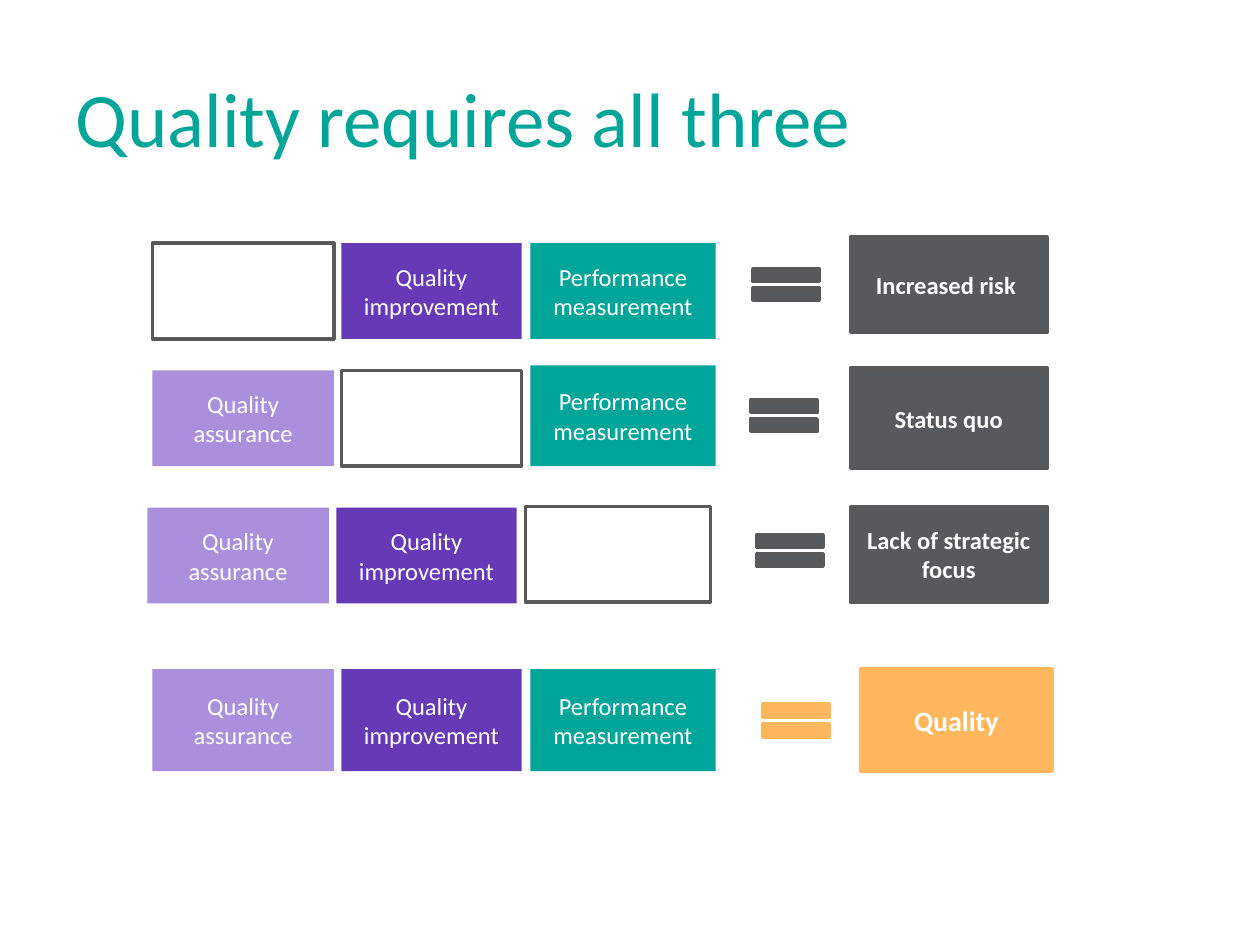
from pptx import Presentation
from pptx.dml.color import RGBColor
from pptx.enum.shapes import MSO_SHAPE
from pptx.enum.text import MSO_ANCHOR, PP_ALIGN
from pptx.util import Inches, Pt

TEAL = RGBColor(0x00, 0xA5, 0x99)
PURPLE = RGBColor(0x66, 0x39, 0xB7)
LILAC = RGBColor(0xAA, 0x8F, 0xDC)
ORANGE = RGBColor(0xFF, 0xB7, 0x5E)
GREY = RGBColor(0x56, 0x5A, 0x5C)
EDGE = RGBColor(0x59, 0x59, 0x59)
WHITE = RGBColor(0xFF, 0xFF, 0xFF)

PARTS = [
    ("Quality assurance", LILAC, 1.44),
    ("Quality improvement", PURPLE, 1.43),
    ("Performance measurement", TEAL, 1.47),
]
PITCH = 1.5
ROWS = [
    dict(box=(1.21, 1.93, 0.76), gap=0, rise=0, sign=(5.88, 2.05, 0.72, 0.42),
         end=(6.75, 1.88, 1.56, 0.76), text="Increased risk "),
    dict(box=(1.21, 2.94, 0.76), gap=1, rise=0.04, sign=(5.86, 3.09, 0.72, 0.42),
         end=(6.75, 2.92, 1.56, 0.8), text="Status quo"),
    dict(box=(1.17, 4.03, 0.76), gap=2, rise=0.01, sign=(5.91, 4.16, 0.72, 0.42),
         end=(6.75, 4.02, 1.56, 0.76), text="Lack of strategic focus"),
    dict(box=(1.21, 5.31, 0.81), gap=None, rise=0, sign=(5.96, 5.49, 0.72, 0.45),
         end=(6.83, 5.31, 1.52, 0.81), text="Quality", fill=ORANGE, edge=ORANGE, size=16),
]


def write(shape, text, align, **style):
    frame = shape.text_frame
    frame.word_wrap = True
    frame.vertical_anchor = MSO_ANCHOR.MIDDLE
    para = frame.paragraphs[0]
    para.alignment = align
    run = para.add_run()
    run.text = text
    run.font.color.rgb = style.pop("color")
    for name, value in {"name": "Calibri", **style}.items():
        setattr(run.font, name, value)


def block(slide, box, fill=None, edge=None, kind=MSO_SHAPE.RECTANGLE):
    shape = slide.shapes.add_shape(kind, *map(Inches, box))
    shape.shadow.inherit = False
    if fill is None:
        shape.fill.background()
    else:
        shape.fill.solid()
        shape.fill.fore_color.rgb = fill
    if edge is None:
        shape.line.fill.background()
    else:
        shape.line.color.rgb = edge
        shape.line.width = Pt(2)
    return shape


def add_parts(slide, box, gap, rise):
    left, top, high = box
    for col, (text, fill, wide) in enumerate(PARTS):
        lift = rise if col == 2 else 0
        tall = high if col == gap else high + lift
        spot = (left + col * PITCH, top - lift, wide, tall)
        if col == gap:
            block(slide, spot, edge=EDGE)
        else:
            shape = block(slide, spot, fill)
            write(shape, text, PP_ALIGN.CENTER, size=Pt(14), color=WHITE)


def add_end(slide, sign, end, text, fill=GREY, edge=EDGE, size=14):
    block(slide, sign, fill, edge, MSO_SHAPE.MATH_EQUAL)
    shape = block(slide, end, fill, edge)
    write(shape, text, PP_ALIGN.CENTER, size=Pt(size), bold=True, color=WHITE)


def add_row(slide, box, gap, rise, **end):
    add_parts(slide, box, gap, rise)
    add_end(slide, **end)


def add_title(slide, box, text):
    shape = slide.shapes.add_textbox(*map(Inches, box))
    write(shape, text, PP_ALIGN.LEFT, size=Pt(44), color=TEAL)


def main():
    deck = Presentation()
    deck.slide_width = Inches(10)
    deck.slide_height = Inches(7.5)
    slide = deck.slides.add_slide(deck.slide_layouts[6])
    for row in ROWS:
        add_row(slide, **row)
    add_title(slide, (0.5, 0.3, 9, 1.25), "Quality requires all three")
    deck.save("out.pptx")


if __name__ == "__main__":
    main()
